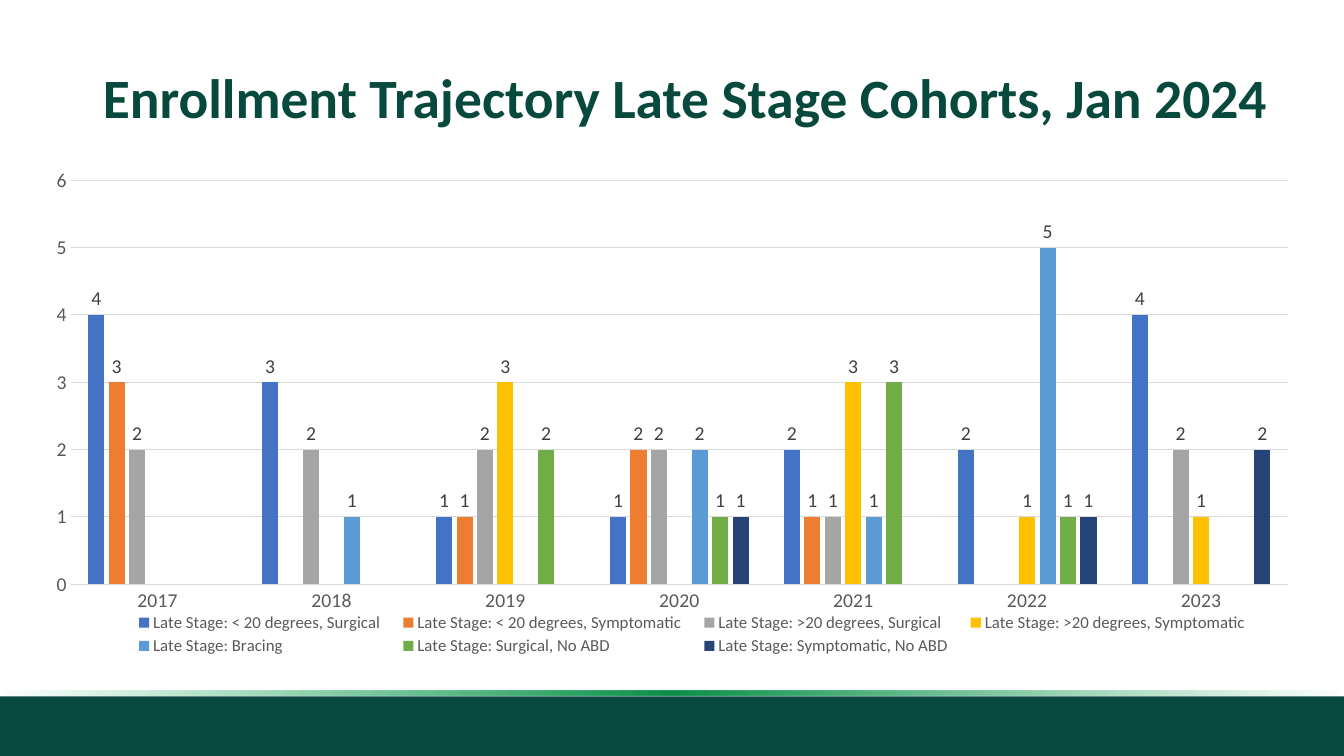
import pptx
import pptx.chart.data
import pptx.dml.color
import pptx.enum.chart
import pptx.enum.shapes
import pptx.enum.text
import pptx.oxml
import pptx.oxml.ns
import pptx.util

RGBColor = pptx.dml.color.RGBColor
WIDTH, HEIGHT = pptx.util.Inches(13.33), pptx.util.Inches(7.5)
FONT = "Calibri"
DARK_GREEN = RGBColor(0x07, 0x49, 0x3C)
AXIS_GREY = RGBColor(0x59, 0x59, 0x59)
LABEL_GREY = RGBColor(0x40, 0x40, 0x40)
GRID_GREY = RGBColor(0xD9, 0xD9, 0xD9)
BLACK = RGBColor(0, 0, 0)

# Gradient stops: position, colour, opacity (percent)
GLOW_STOPS = [
    (0, RGBColor(0x0D, 0x9D, 0x4F), 0),
    (50, RGBColor(0x0C, 0x90, 0x49), 100),
    (100, RGBColor(0x0F, 0xAB, 0x56), 0),
]

YEARS = [str(year) for year in range(2017, 2024)]
COHORTS = [
    ("Late Stage: < 20 degrees, Surgical", RGBColor(0x44, 0x72, 0xC4),
     [4, 3, 1, 1, 2, 2, 4]),
    ("Late Stage: < 20 degrees, Symptomatic", RGBColor(0xED, 0x7D, 0x31),
     [3, None, 1, 2, 1, None, None]),
    ("Late Stage: >20 degrees, Surgical", RGBColor(0xA5, 0xA5, 0xA5),
     [2, 2, 2, 2, 1, None, 2]),
    ("Late Stage: >20 degrees, Symptomatic", RGBColor(0xFF, 0xC0, 0x00),
     [None, None, 3, None, 3, 1, 1]),
    ("Late Stage: Bracing", RGBColor(0x5B, 0x9B, 0xD5),
     [None, 1, None, 2, 1, 5, None]),
    ("Late Stage: Surgical, No ABD", RGBColor(0x70, 0xAD, 0x47),
     [None, None, 2, 1, 3, 1, None]),
    ("Late Stage: Symptomatic, No ABD", RGBColor(0x26, 0x44, 0x78),
     [None, None, None, 1, None, 1, 2]),
]


def area(left, top, width, height):
    """Turn percentages of the slide into a position and a size."""
    return [int(share / 100 * side) for share, side in
            zip((left, top, width, height), (WIDTH, HEIGHT) * 2)]


def set_font(font, size, color, bold=False):
    font.name = FONT
    font.size = pptx.util.Pt(size)
    font.bold = bold
    font.color.rgb = color


def write_text(frame, text, size, color, bold=False, line_spacing=1.0):
    para = frame.paragraphs[0]
    para.alignment = pptx.enum.text.PP_ALIGN.LEFT
    para.line_spacing = line_spacing
    span = para.add_run()
    span.text = text
    set_font(span.font, size, color, bold)


def add_title(page, text, place):
    title = page.shapes.title
    title.left, title.top, title.width, title.height = place
    frame = title.text_frame
    frame.word_wrap = True
    frame.auto_size = pptx.enum.text.MSO_AUTO_SIZE.NONE
    frame.vertical_anchor = pptx.enum.text.MSO_ANCHOR.MIDDLE
    write_text(frame, text, size=39.6, color=DARK_GREEN, bold=True, line_spacing=0.9)


def add_band(page, place, color):
    band = page.shapes.add_shape(pptx.enum.shapes.MSO_SHAPE.RECTANGLE, *place)
    band.shadow.inherit = False
    band.line.fill.background()
    band.fill.solid()
    band.fill.fore_color.rgb = color
    return band


def fade_sideways(band, stops):
    """Replace the solid fill by a horizontal gradient with opacity."""
    stop_xml = "".join(
        f'<a:gs pos="{position * 1000}"><a:srgbClr val="{color}">'
        f'<a:alpha val="{opacity * 1000}"/></a:srgbClr></a:gs>'
        for position, color, opacity in stops)
    gradient = pptx.oxml.parse_xml(
        f'<a:gradFill {pptx.oxml.ns.nsdecls("a")} rotWithShape="1">'
        f'<a:gsLst>{stop_xml}</a:gsLst><a:lin ang="10800000" scaled="0"/></a:gradFill>')
    solid = band._element.spPr.find(pptx.oxml.ns.qn("a:solidFill"))
    solid.getparent().replace(solid, gradient)


def layout_element(x, y, w, h, inner=False):
    """Build a fixed layout in shares of the chart's size."""
    target = '<c:layoutTarget val="inner"/>' if inner else ""
    modes = "".join(f'<c:{side}Mode val="edge"/>' for side in "xy")
    sizes = "".join(f'<c:{side} val="{share}"/>'
                    for side, share in zip("xywh", (x, y, w, h)))
    return pptx.oxml.parse_xml(
        f'<c:layout {pptx.oxml.ns.nsdecls("c")}>'
        f'<c:manualLayout>{target}{modes}{sizes}</c:manualLayout></c:layout>')


def place_part(part, layout, index):
    for old in part.findall(pptx.oxml.ns.qn("c:layout")):
        part.remove(old)
    part.insert(index, layout)


def style_axis(axis):
    axis.major_tick_mark = pptx.enum.chart.XL_TICK_MARK.NONE
    axis.minor_tick_mark = pptx.enum.chart.XL_TICK_MARK.NONE
    set_font(axis.tick_labels.font, 14, AXIS_GREY)


def style_line(line):
    line.color.rgb = GRID_GREY
    line.width = pptx.util.Pt(0.75)


def style_series(series, color):
    series.format.fill.solid()
    series.format.fill.fore_color.rgb = color
    series.invert_if_negative = False
    labels = series.data_labels
    labels.show_value = True
    labels.position = pptx.enum.chart.XL_LABEL_POSITION.OUTSIDE_END
    set_font(labels.font, 14, LABEL_GREY)


def add_enrollment_chart(page, place):
    data = pptx.chart.data.CategoryChartData()
    data.categories = YEARS
    for name, _, values in COHORTS:
        data.add_series(name, values)
    chart = page.shapes.add_chart(
        pptx.enum.chart.XL_CHART_TYPE.COLUMN_CLUSTERED, *place, data).chart
    set_font(chart.font, 10, BLACK)
    chart.has_title = False

    # Columns
    plot = chart.plots[0]
    plot.gap_width, plot.overlap = 219, -27
    plot.vary_by_categories = False
    for series, (_, color, _) in zip(plot.series, COHORTS):
        style_series(series, color)

    # Axes
    style_axis(chart.category_axis)
    style_line(chart.category_axis.format.line)
    value_axis = chart.value_axis
    style_axis(value_axis)
    value_axis.minimum_scale, value_axis.maximum_scale = 0, 6
    value_axis.major_unit = 1
    value_axis.format.line.fill.background()
    style_line(value_axis.major_gridlines.format.line)

    # Legend and plot area
    chart.has_legend = True
    legend = chart.legend
    legend.position = pptx.enum.chart.XL_LEGEND_POSITION.BOTTOM
    legend.include_in_layout = False
    set_font(legend.font, 12, AXIS_GREY)
    place_part(legend._element, layout_element(0.07, 0.9, 0.89, 0.1), 1)
    plot_area = chart._chartSpace.chart.plotArea
    place_part(plot_area, layout_element(0.03, 0.04, 0.95, 0.81, inner=True), 0)


def main():
    deck = pptx.Presentation()
    deck.slide_width, deck.slide_height = WIDTH, HEIGHT
    page = deck.slides.add_slide(deck.slide_layouts.get_by_name("Title Only"))

    # Footer bands
    add_band(page, area(0, 92.1, 100, 7.9), DARK_GREEN)
    fade_sideways(add_band(page, area(0, 91.3, 100, 0.75), DARK_GREEN), GLOW_STOPS)

    # Title and chart
    add_title(page, "Enrollment Trajectory Late Stage Cohorts, Jan 2024",
              area(6.9, 5.33, 88.37, 15.87))
    add_enrollment_chart(page, area(2.4, 21.2, 95.35, 66))

    deck.save("out.pptx")


if __name__ == "__main__":
    main()
